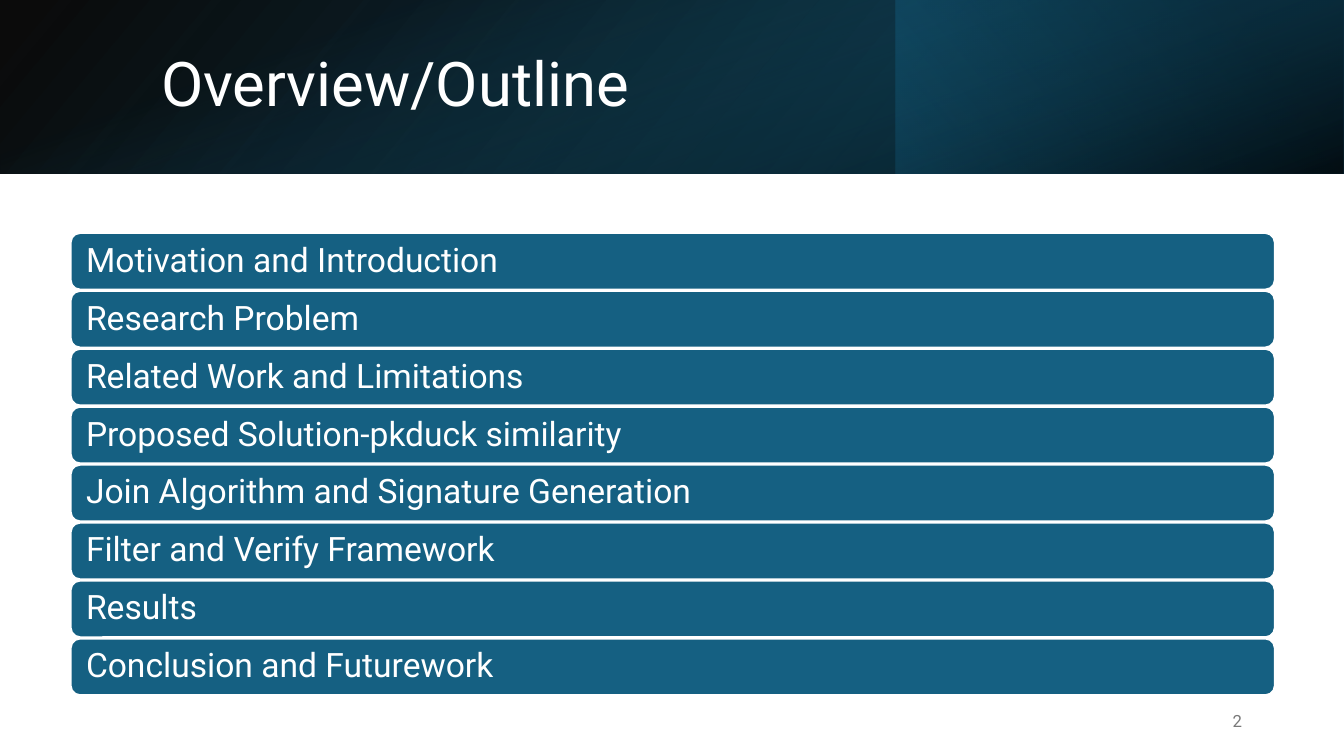
from pptx import Presentation
from pptx.dml.color import RGBColor
from pptx.enum.shapes import MSO_SHAPE
from pptx.enum.text import MSO_ANCHOR, PP_ALIGN
from pptx.oxml.ns import qn
from pptx.util import Cm, Pt
from lxml import etree

RECTANGLE = MSO_SHAPE.RECTANGLE
ROUNDED = MSO_SHAPE.ROUNDED_RECTANGLE
MIDDLE = MSO_ANCHOR.MIDDLE
LEFT = PP_ALIGN.LEFT
RIGHT = PP_ALIGN.RIGHT

FONT = "Roboto"
COLORS = {
    "white": "FFFFFF",
    "black": "000000",
    "blue": "156082",
    "deep": "104862",
    "navy": "0B3041",
    "gray": "797979",
}
WIDTH, HEIGHT, BANNER = 33.87, 19.05, 4.37
TOPICS = [
    "Motivation and Introduction",
    "Research Problem",
    "Related Work and Limitations",
    "Proposed Solution-pkduck similarity",
    "Join Algorithm and Signature Generation",
    "Filter and Verify Framework",
    "Results",
    "Conclusion and Futurework",
]
BAR_TOP, BAR_PITCH = 5.87, 1.46


class SlideBuilder:
    def __init__(self, slide):
        self.slide = slide

    def color(self, name):
        return RGBColor.from_string(COLORS[name])

    def shape(self, kind, box):
        shape = self.slide.shapes.add_shape(kind, *map(Cm, box))
        shape.shadow.inherit = False
        return shape

    def gradient(self, box, stops, angle, rotation=0, flipped=False):
        shape = self.shape(RECTANGLE, box)
        shape.line.fill.background()
        shape.rotation = rotation
        shape.fill.gradient()
        shape.fill.gradient_angle = 360 - angle
        properties = shape._element.spPr
        if flipped:
            properties.find(qn("a:xfrm")).set("flipH", "1")
        for stop, (position, name, _) in zip(shape.fill.gradient_stops, stops):
            stop.position = position / 100
            stop.color.rgb = self.color(name)
        for color, (_, _, opacity) in zip(properties.iter(qn("a:srgbClr")), stops):
            etree.SubElement(color, qn("a:alpha")).set("val", str(opacity * 1000))

    def set_text(self, shape, text, size, color, align=LEFT, spacing=1.0):
        frame = shape.text_frame
        frame.word_wrap = True
        frame.vertical_anchor = MIDDLE
        paragraph = frame.paragraphs[0]
        paragraph.text = text
        paragraph.alignment = align
        paragraph.line_spacing = spacing
        paragraph.font.name = FONT
        paragraph.font.size = Pt(size)
        paragraph.font.color.rgb = self.color(color)

    def label(self, box, *style, **options):
        self.set_text(self.slide.shapes.add_textbox(*map(Cm, box)), *style, **options)

    def bar(self, box, text):
        shape = self.shape(ROUNDED, box)
        shape.fill.solid()
        shape.fill.fore_color.rgb = self.color("blue")
        shape.line.color.rgb = self.color("white")
        shape.line.width = Pt(1.5)
        shape.text_frame.margin_left = shape.text_frame.margin_right = Cm(0.32)
        self.set_text(shape, text, 24, "white", spacing=0.9)


def main():
    presentation = Presentation()
    presentation.slide_width, presentation.slide_height = Cm(WIDTH), Cm(HEIGHT)
    builder = SlideBuilder(presentation.slides.add_slide(presentation.slide_layouts[6]))

    builder.gradient((0, 0, WIDTH, BANNER),
                     [(0, "black", 96), (100, "deep", 100)], 140, flipped=True)
    builder.gradient((WIDTH * 2 / 3, 0, WIDTH / 3, BANNER),
                     [(19, "navy", 68), (100, "blue", 79)], 320, rotation=180)
    offset = (WIDTH - BANNER) / 2
    builder.gradient((offset, -offset, BANNER, WIDTH),
                     [(23, "blue", 0), (99, "black", 74)], 340, rotation=90)

    builder.label((3.81, 0.97, 27.89, 2.44), "Overview/Outline", 44, "white", spacing=0.9)
    for index, topic in enumerate(TOPICS):
        builder.bar((1.78, BAR_TOP + index * BAR_PITCH, 30.35, 1.43), topic)
    builder.label((23.93, 17.65, 7.62, 1.02), "2", 12, "gray", align=RIGHT)

    presentation.save("out.pptx")


if __name__ == "__main__":
    main()
